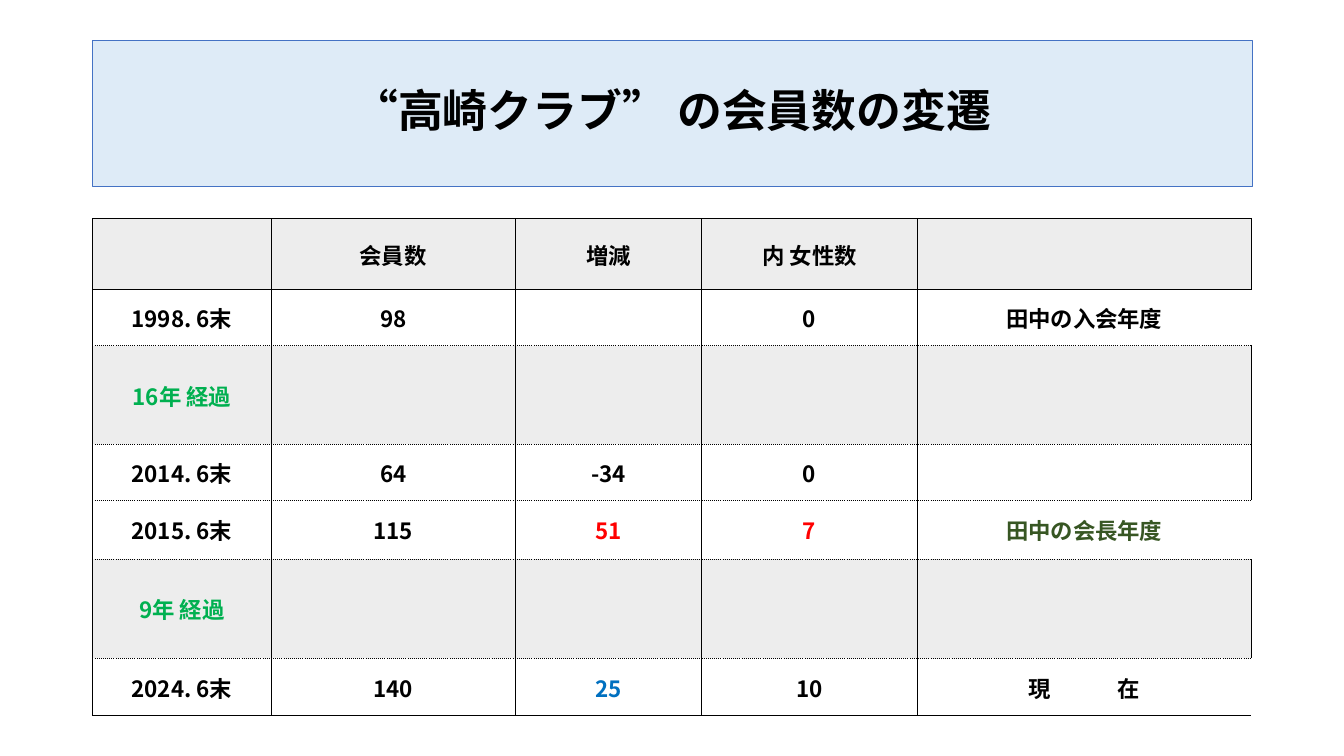
import pptx
import pptx.dml.color
import pptx.enum.dml
import pptx.enum.shapes
import pptx.enum.text
import pptx.oxml.ns
import pptx.util
from lxml import etree
from pptx.util import Inches

BLACK = "000000"
GRAY = "EDEDED"
GREEN = "00B050"
RED = "FF0000"
EAST_ASIAN_FONT = "Noto Sans CJK JP"

COLUMN_WIDTHS = [1.77, 2.42, 1.85, 2.14, 1.46, 0.81, 1.04]
ROW_HEIGHTS = [0.7, 0.56, 0.49, 0.49, 0.55, 0.59, 0.49, 0.49, 0.57]
NOTE_COLUMN = 4
LAST_COLUMN = len(COLUMN_WIDTHS) - 1
GRAY_ROWS = {0, 2, 3, 6, 7}
SOLID_EDGES = {0, 1, len(ROW_HEIGHTS)}
ELAPSED_ROWS = [2, 6]
NOTE_ROWS = [1, 5, 8]

MEMBER_ROWS = {
    0: ["", "会員数", "増減", "内 女性数"],
    1: ["1998. 6末", "98", "", "0", "田中の入会年度"],
    2: ["16年 経過"],
    4: ["2014. 6末", "64", "-34", "0"],
    5: ["2015. 6末", "115", "51", "7", "田中の会長年度"],
    6: ["9年 経過"],
    8: ["2024. 6末", "140", "25", "10", "現　　　在"],
}
TEXT_COLORS = {
    (2, 0): GREEN,
    (5, 2): RED,
    (5, 3): RED,
    (5, 4): "375623",
    (6, 0): GREEN,
    (8, 2): "0070C0",
}


def rgb(color):
    return pptx.dml.color.RGBColor.from_string(color)


def add_element(parent, tag, **attributes):
    return etree.SubElement(parent, pptx.oxml.ns.qn(tag), **attributes)


def write_text(text_frame, text, size, font_name, color=BLACK):
    paragraph = text_frame.paragraphs[0]
    paragraph.text = text
    paragraph.alignment = pptx.enum.text.PP_ALIGN.CENTER
    font = paragraph.font
    font.size = pptx.util.Pt(size)
    font.bold = True
    font.name = font_name
    font.color.rgb = rgb(color)
    properties = paragraph._p.pPr.find(pptx.oxml.ns.qn("a:defRPr"))
    add_element(properties, "a:ea", typeface=EAST_ASIAN_FONT)
    return paragraph


def add_title(slide, text):
    title = slide.shapes.add_shape(
        pptx.enum.shapes.MSO_SHAPE.RECTANGLE,
        Inches(0.92), Inches(0.4), Inches(11.5), Inches(1.45))
    title.shadow.inherit = False
    title.fill.solid()
    title.fill.fore_color.rgb = rgb("DEEBF7")
    title.line.color.rgb = rgb("4472C4")
    title.line.width = pptx.util.Pt(0.75)
    title.text_frame.word_wrap = True
    title.text_frame.vertical_anchor = pptx.enum.text.MSO_ANCHOR.MIDDLE
    write_text(title.text_frame, text, 32, "Arial").line_spacing = 0.9


def horizontal_style(edge):
    if edge - 1 in ELAPSED_ROWS:
        return None
    return "solid" if edge in SOLID_EDGES else "sysDot"


def vertical_style(edge):
    return None if NOTE_COLUMN < edge <= LAST_COLUMN else "solid"


def set_borders(cell, row, column):
    properties = cell._tc.get_or_add_tcPr()
    borders = {
        "a:lnL": vertical_style(column),
        "a:lnR": vertical_style(column + 1),
        "a:lnT": horizontal_style(row),
        "a:lnB": horizontal_style(row + 1),
    }
    for position, (tag, style) in enumerate(borders.items()):
        line = add_element(properties, tag, w=str(pptx.util.Pt(0.5)))
        properties.insert(position, line)
        if style is None:
            add_element(line, "a:noFill")
        else:
            fill = add_element(line, "a:solidFill")
            add_element(fill, "a:srgbClr", val=BLACK)
            add_element(line, "a:prstDash", val=style)


def format_cell(cell, row, column):
    cell.margin_left = cell.margin_right = cell.margin_top = Inches(0.01)
    cell.margin_bottom = 0
    cell.vertical_anchor = pptx.enum.text.MSO_ANCHOR.MIDDLE
    if row in GRAY_ROWS:
        cell.fill.solid()
        cell.fill.fore_color.rgb = rgb(GRAY)
    else:
        cell.fill.background()
    set_borders(cell, row, column)


def add_member_table(slide):
    table = slide.shapes.add_table(
        len(ROW_HEIGHTS), len(COLUMN_WIDTHS),
        Inches(0.92), Inches(2.17), Inches(11.5), Inches(4.93)).table
    table.first_row = False
    table.horz_banding = False
    for column, width in zip(table.columns, COLUMN_WIDTHS):
        column.width = Inches(width)
    for row, height in zip(table.rows, ROW_HEIGHTS):
        row.height = Inches(height)
    for row in range(len(ROW_HEIGHTS)):
        for column in range(len(COLUMN_WIDTHS)):
            format_cell(table.cell(row, column), row, column)
    for row in ELAPSED_ROWS:
        table.cell(row, 0).merge(table.cell(row + 1, 0))
    for row in NOTE_ROWS:
        table.cell(row, NOTE_COLUMN).merge(table.cell(row, LAST_COLUMN))
    for row, texts in MEMBER_ROWS.items():
        for column, text in enumerate(texts):
            if text:
                color = TEXT_COLORS.get((row, column), BLACK)
                text_frame = table.cell(row, column).text_frame
                write_text(text_frame, text, 16, EAST_ASIAN_FONT, color)


def main():
    presentation = pptx.Presentation()
    presentation.slide_width = Inches(13.33)
    presentation.slide_height = Inches(7.5)
    slide = presentation.slides.add_slide(presentation.slide_layouts[6])
    add_title(slide, "“高崎クラブ” の会員数の変遷")
    add_member_table(slide)
    presentation.save("out.pptx")


if __name__ == "__main__":
    main()
